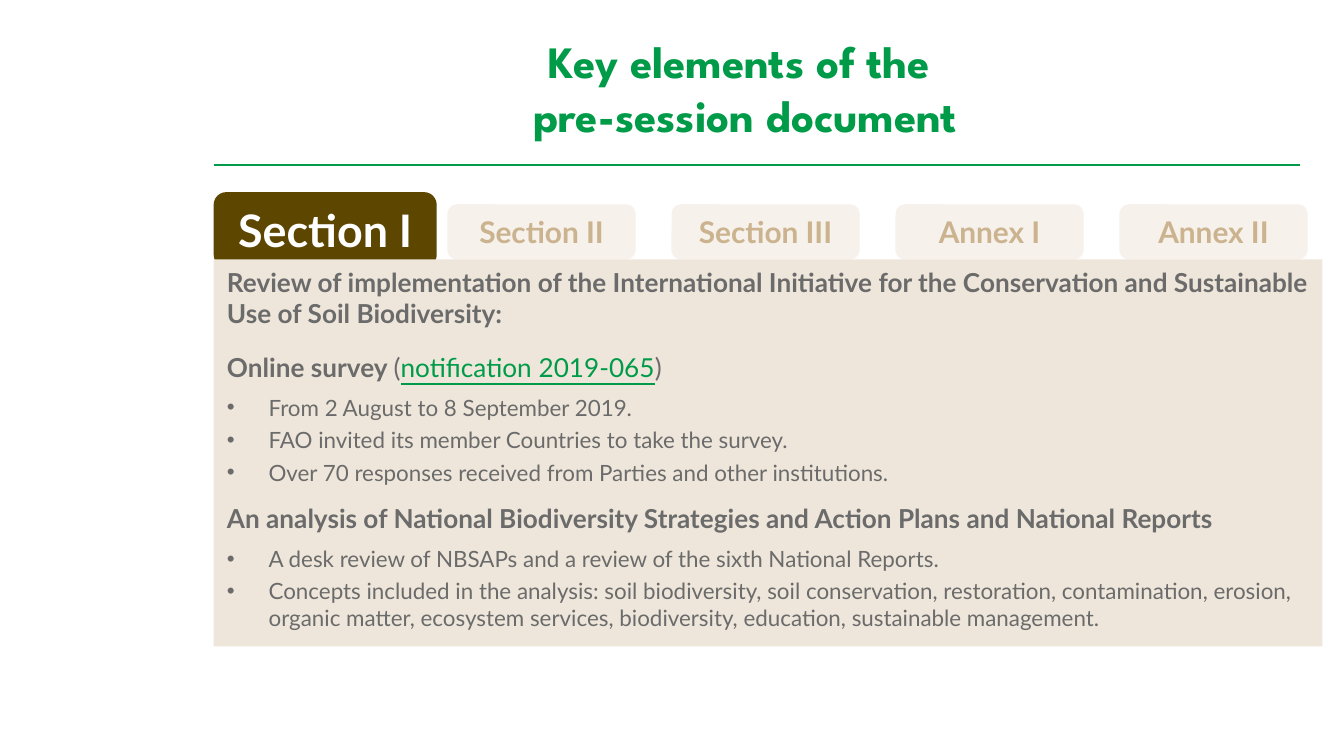
from pptx import Presentation
from pptx.dml.color import RGBColor
from pptx.enum.shapes import MSO_CONNECTOR, MSO_SHAPE
from pptx.enum.text import MSO_ANCHOR, PP_ALIGN
from pptx.oxml.ns import qn
from pptx.util import Inches, Pt
from lxml import etree

ROUNDED, RECT = MSO_SHAPE.ROUNDED_RECTANGLE, MSO_SHAPE.RECTANGLE
STRAIGHT = MSO_CONNECTOR.STRAIGHT
TOP, MIDDLE = MSO_ANCHOR.TOP, MSO_ANCHOR.MIDDLE
LEFT, CENTER = PP_ALIGN.LEFT, PP_ALIGN.CENTER

GREEN, BROWN, GREY = "009B48", "5C4600", "6B6B6B"
CREAM, SAND, TAN, WHITE = "F6F1EA", "EEE6DA", "CBB38F", "FFFFFF"

# 16:9 slide
prs = Presentation()
prs.slide_width = Inches(10)
prs.slide_height = Inches(10 * 9 / 16)
slide = prs.slides.add_slide(prs.slide_layouts[6])


def style(font, size, color, bold=True, name="Lato"):
    font.name, font.size, font.bold = name, Pt(size), bold
    font.color.rgb = RGBColor.from_string(color)


def add_panel(kind, left, top, width, height, fill, anchor):
    panel = slide.shapes.add_shape(
        kind, Inches(left), Inches(top), Inches(width), Inches(height))
    panel.shadow.inherit = False
    panel.fill.solid()
    panel.fill.fore_color.rgb = RGBColor.from_string(fill)
    panel.line.fill.background()
    panel.text_frame.word_wrap = True
    panel.text_frame.vertical_anchor = anchor
    return panel.text_frame


# Title and the rule below it
rule = slide.shapes.add_connector(
    STRAIGHT, Inches(1.59), Inches(1.23), Inches(9.67), Inches(1.23))
rule.line.color.rgb = RGBColor.from_string(GREEN)
rule.line.width = Pt(1)
etree.SubElement(rule._element.spPr, qn("a:effectLst"))

title = slide.shapes.add_textbox(
    Inches(1.59), Inches(0.18), Inches(7.91), Inches(0.94)).text_frame
title.word_wrap = True
title.vertical_anchor = MIDDLE
title.text = "Key elements of the \vpre-session document"
title.paragraphs[0].alignment = CENTER
for run in title.paragraphs[0].runs:
    style(run.font, 24, GREEN, name="League Spartan")

# Section tabs, the first one active
tabs = [("Section I", 1.59, 1.43, 1.66, 0.56, BROWN, 24, WHITE)]
for i, label in enumerate(["Section II", "Section III", "Annex I", "Annex II"]):
    tabs.append((label, 3.33 + i * 5 / 3, 1.52, 1.4, 0.41, CREAM, 16, TAN))
for label, left, top, width, height, fill, size, color in tabs:
    tab = add_panel(ROUNDED, left, top, width, height, fill, MIDDLE)
    tab.text = label
    tab.paragraphs[0].alignment = CENTER
    style(tab.paragraphs[0].runs[0].font, size, color)

# Content of the active section: (is bullet, text)
content = [
    (False, "Review of implementation of the International Initiative for the "
            "Conservation and Sustainable Use of Soil Biodiversity:"),
    (False, "Online survey "),
    (True, "From 2 August to 8 September 2019."),
    (True, "FAO invited its member Countries to take the survey."),
    (True, "Over 70 responses received from Parties and other institutions."),
    (False, "An analysis of National Biodiversity Strategies and Action Plans "
            "and National Reports"),
    (True, "A desk review of NBSAPs and a review of the sixth National Reports."),
    (True, "Concepts included in the analysis: soil biodiversity, soil "
           "conservation, restoration, contamination, erosion, organic matter, "
           "ecosystem services, biodiversity, education, sustainable management."),
]
body = add_panel(RECT, 1.59, 1.93, 8.25, 2.88, SAND, TOP)
body.text = "\n".join(text for _, text in content)
for i, (is_bullet, _) in enumerate(content):
    paragraph = body.paragraphs[i]
    paragraph.alignment = LEFT
    paragraph.space_after = Pt(3 if is_bullet else 6)
    if is_bullet:
        props = paragraph._p.get_or_add_pPr()
        props.set("marL", str(Inches(0.31)))
        props.set("indent", str(-Inches(0.31)))
        etree.SubElement(props, qn("a:buFont"), typeface="Arial")
        etree.SubElement(props, qn("a:buChar"), char="•")
    elif i:
        paragraph.space_before = Pt(6)
    style(paragraph.runs[0].font, 12 if is_bullet else 14, GREY, not is_bullet)

# Survey reference after its heading
for text, color in [("(", GREY), ("notification 2019-065", GREEN), (")", GREY)]:
    run = body.paragraphs[1].add_run()
    run.text = text
    style(run.font, 14, color, bold=False)
    run.font.underline = color == GREEN

prs.save("out.pptx")
